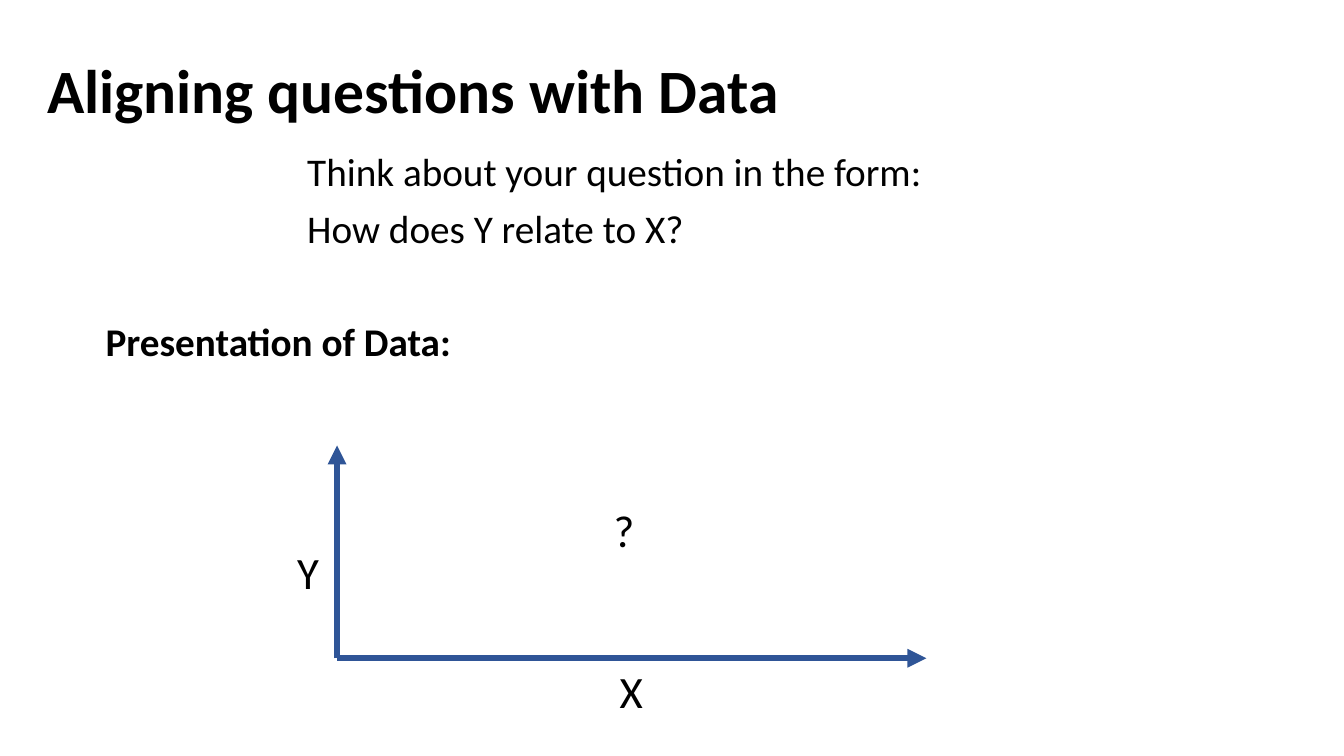
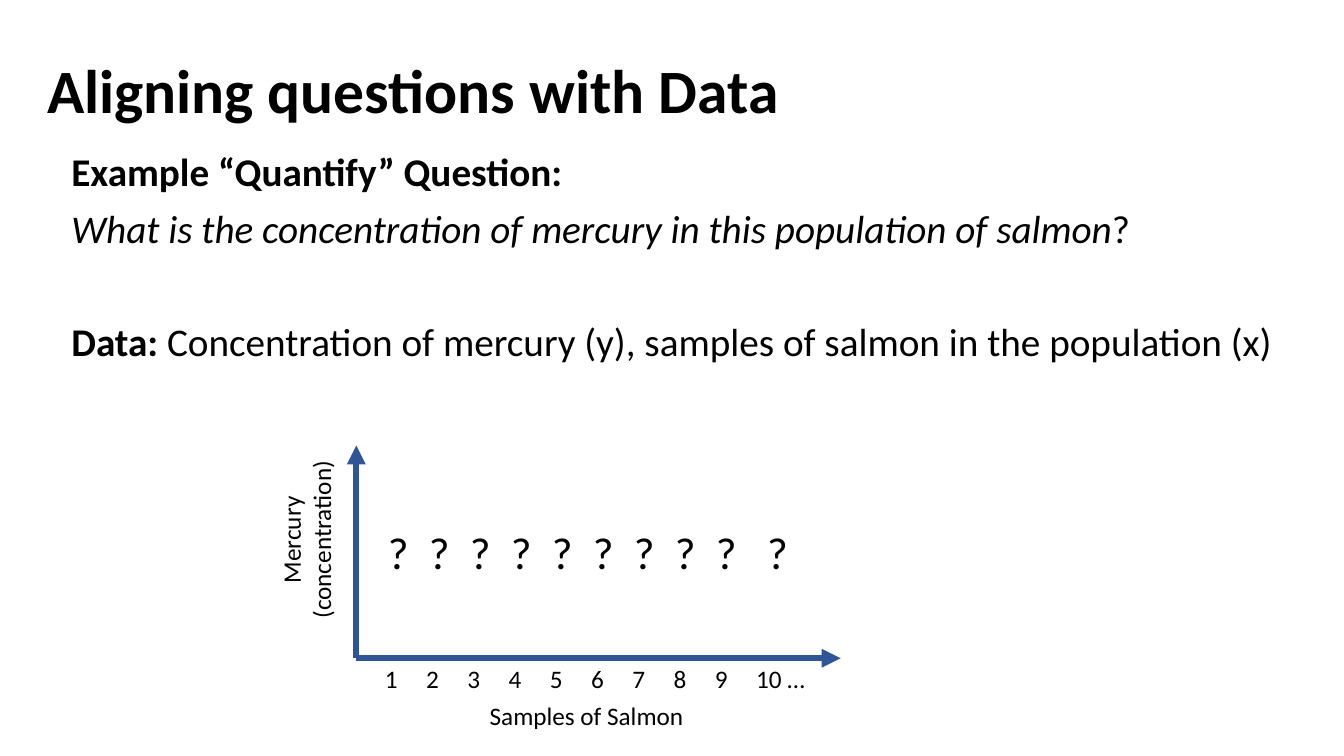
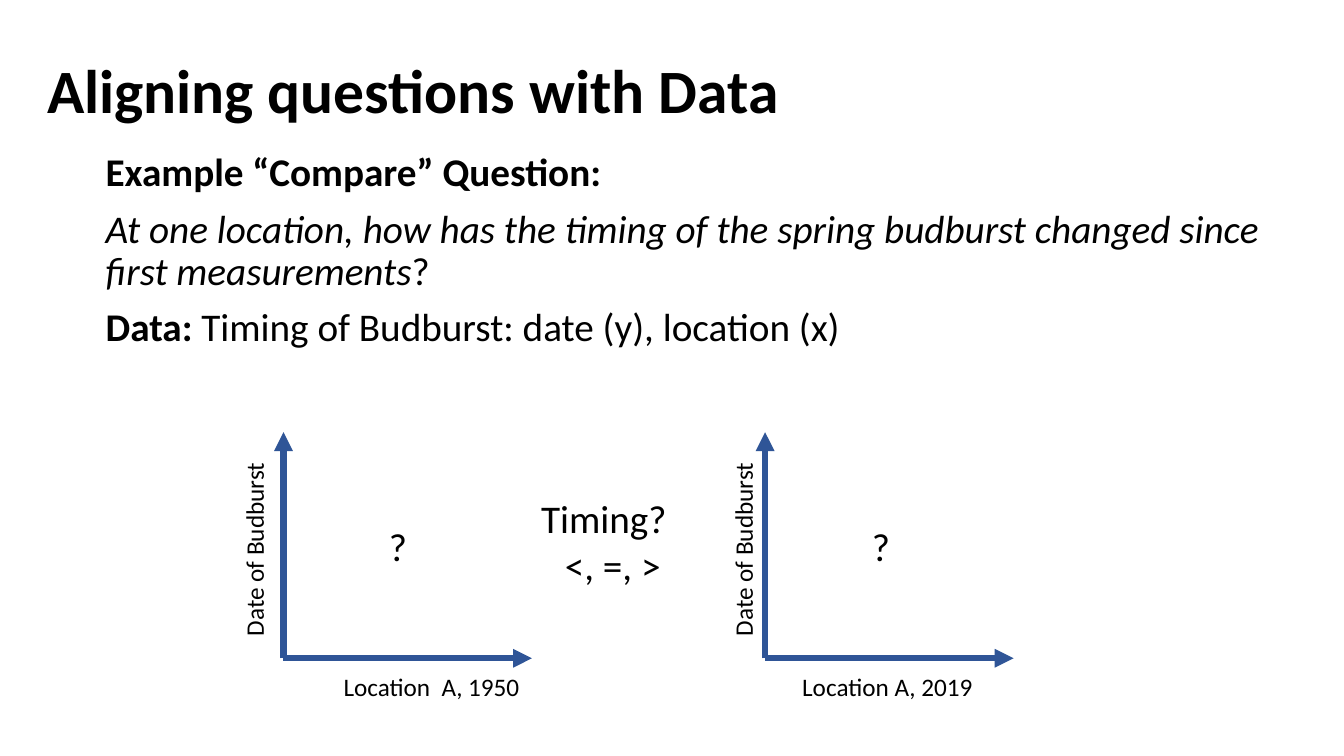
"""Build three slides on aligning questions with data."""
from dataclasses import dataclass
from typing import Optional

import lxml.etree
import pptx
import pptx.dml.color
import pptx.enum.shapes
import pptx.enum.text
import pptx.oxml.ns
import pptx.presentation
import pptx.shapes.autoshape
import pptx.slide
import pptx.text.text
import pptx.util

Pt = pptx.util.Pt
qn = pptx.oxml.ns.qn
ALIGN = pptx.enum.text.PP_ALIGN
ANCHOR = pptx.enum.text.MSO_ANCHOR

COLOURS = {"text": "000000", "axis": "2F5597"}
FONT = "Calibri"
TITLE = "Aligning questions with Data"
TITLE_BOX = (26.6, 14.4, 828, 104.4)
BODY_BOX = (68.4, 105.8, 852.5, 405.4)
WIDE_BODY_BOX = (43.9, 105.8, 876.2, 405.4)
TITLE_FORMAT = {"size": Pt(44), "bold": True}
BODY_SIZE = 28
LINE_SPACING = 0.9
BEFORE = 10
BEFORE_DATA = 50.8
AXIS_Y = 470.2
AXIS_WIDTH = 4.5

Box = tuple[float, float, float, float]


@dataclass(frozen=True)
class Run:
    text: str
    bold: bool = False
    italic: bool = False


@dataclass(frozen=True)
class Line:
    runs: tuple[Run, ...]
    before: float = BEFORE
    indent: float = 0


@dataclass(frozen=True)
class Axes:
    left: float
    top: float
    right: float


@dataclass(frozen=True)
class Label:
    lines: tuple[str, ...]
    box: Box
    size: float
    centred: bool = False
    rotation: float = 0
    tabs: tuple[float, ...] = ()


@dataclass(frozen=True)
class Page:
    body_box: Box
    body: tuple[Line, ...]
    axes: tuple[Axes, ...]
    labels: tuple[Label, ...]


def colour(name: str) -> pptx.dml.color.RGBColor:
    return pptx.dml.color.RGBColor.from_string(COLOURS[name])


def add_run(paragraph: pptx.text.text._Paragraph, text: str, formats: dict) -> None:
    run = paragraph.add_run()
    run.text = text
    for attribute, value in {"name": FONT, **formats}.items():
        setattr(run.font, attribute, value)
    run.font.color.rgb = colour("text")


def add_box(slide: pptx.slide.Slide, box: Box, wrap: bool = True) -> pptx.shapes.autoshape.Shape:
    text_box = slide.shapes.add_textbox(*map(Pt, box))
    text_box.text_frame.word_wrap = wrap
    return text_box


def next_paragraph(frame: pptx.text.text.TextFrame, index: int) -> pptx.text.text._Paragraph:
    return frame.add_paragraph() if index else frame.paragraphs[0]


def draw_title(slide: pptx.slide.Slide) -> None:
    frame = add_box(slide, TITLE_BOX).text_frame
    frame.vertical_anchor = ANCHOR.MIDDLE
    heading = frame.paragraphs[0]
    heading.line_spacing = LINE_SPACING
    add_run(heading, TITLE, TITLE_FORMAT)


def draw_body(slide: pptx.slide.Slide, box: Box, lines: tuple[Line, ...]) -> None:
    frame = add_box(slide, box).text_frame
    for index, line in enumerate(lines):
        paragraph = next_paragraph(frame, index)
        paragraph.line_spacing = LINE_SPACING
        paragraph.space_before = Pt(line.before)
        paragraph._p.get_or_add_pPr().set("marL", str(Pt(line.indent)))
        for run in line.runs:
            add_run(paragraph, run.text,
                    {"size": Pt(BODY_SIZE), "bold": run.bold, "italic": run.italic})


def draw_arrow(slide: pptx.slide.Slide, x: float, y: float, end_x: float, end_y: float) -> None:
    arrow = slide.shapes.add_connector(
        pptx.enum.shapes.MSO_CONNECTOR.STRAIGHT, Pt(x), Pt(y), Pt(end_x), Pt(end_y))
    arrow.line.color.rgb = colour("axis")
    arrow.line.width = Pt(AXIS_WIDTH)
    lxml.etree.SubElement(arrow.line._get_or_add_ln(), qn("a:tailEnd"), type="triangle")
    lxml.etree.SubElement(arrow._element.spPr, qn("a:effectLst"))


def draw_axes(slide: pptx.slide.Slide, axes: Axes) -> None:
    for end_x, end_y in ((axes.left, axes.top), (axes.right, AXIS_Y)):
        draw_arrow(slide, axes.left, AXIS_Y, end_x, end_y)


def draw_label(slide: pptx.slide.Slide, label: Label) -> None:
    text_box = add_box(slide, label.box, wrap=bool(label.tabs))
    text_box.rotation = label.rotation
    for index, text in enumerate(label.lines):
        paragraph = next_paragraph(text_box.text_frame, index)
        paragraph.alignment = ALIGN.CENTER if label.centred else ALIGN.LEFT
        if label.tabs:
            stops = lxml.etree.SubElement(paragraph._p.get_or_add_pPr(), qn("a:tabLst"))
            for position in label.tabs:
                lxml.etree.SubElement(stops, qn("a:tab"), pos=str(Pt(position)), algn="l")
        add_run(paragraph, text, {"size": Pt(label.size)})


def tab_stops(pitch: float, last_extra: float = 0) -> tuple[float, ...]:
    return (*(pitch * step for step in range(1, 9)), pitch * 9 + last_extra)


def draw_page(presentation: pptx.presentation.Presentation, page: Page) -> None:
    slide = presentation.slides.add_slide(presentation.slide_layouts[6])
    draw_title(slide)
    draw_body(slide, page.body_box, page.body)
    for axes in page.axes:
        draw_axes(slide, axes)
    for label in page.labels:
        draw_label(slide, label)


def question(kind: str, text: str) -> tuple[Line, Line]:
    return (Line((Run(f"Example “{kind}” Question:", bold=True),)),
            Line((Run(text, italic=True), Run("?"))))


def data(text: str, before: float = BEFORE) -> Line:
    return Line((Run("Data: ", bold=True), Run(text)), before)


def date_label(left: float) -> Label:
    return Label(("Date of Budburst",), (left, 378, 139.7, 28.8), 18, True, 270)


def unknown(left: float) -> Label:
    return Label(("?",), (left, 369.4, 27.4, 41), 28)


PAGES = (
    Page(
        BODY_BOX,
        (Line((Run("Think about your question in the form:"),), indent=144),
         Line((Run("How does Y relate to X?"),), indent=144),
         Line((Run("Presentation of Data:", bold=True),), BEFORE_DATA)),
        (Axes(240.8, 318.2, 661.7),),
        (Label(("Y",), (205.2, 385.9, 30.2, 46.1), 32),
         Label(("X",), (435.6, 470.2, 31.7, 46.1), 32),
         Label(("?",), (431.3, 355.7, 29.5, 46.1), 32)),
    ),
    Page(
        WIDE_BODY_BOX,
        (*question("Quantify",
                   "What is the concentration of mercury in this population of salmon"),
         data("Concentration of mercury (y), samples of salmon in the population (x)",
              BEFORE_DATA)),
        (Axes(254.5, 318.2, 600.5),),
        (Label(("Mercury", "(concentration)"), (141.8, 360, 154.1, 51.1), 18, True, 270),
         Label(("Samples of Salmon",), (342.7, 496.8, 158.4, 28.8), 18),
         Label(("\t".join("?" * 10),), (270, 371.5, 303.8, 46.1), 32,
               tabs=tab_stops(29.29, 7.2)),
         Label(("\t".join(map(str, range(1, 11))) + " …",), (267.8, 470.2, 321.1, 28.8), 18,
               tabs=tab_stops(29.47))),
    ),
    Page(
        BODY_BOX,
        (*question("Compare", "At one location, how has the timing of the spring budburst "
                              "changed since first measurements"),
         data("Timing of Budburst: date (y), location (x)")),
        (Axes(202.5, 308.7, 380), Axes(546.5, 308.7, 724)),
        (Label(("Timing? ", " <, =, >"), (378.7, 349.2, 111.6, 74.9), 28, True),
         Label(("Location  A, 1950",), (238.3, 475.9, 141.8, 28.8), 18),
         Label(("Location A, 2019",), (565.9, 475.9, 137.5, 28.8), 18),
         date_label(111.6), date_label(460.8), unknown(270.7), unknown(615.6)),
    ),
)


def main() -> None:
    presentation = pptx.Presentation()
    presentation.slide_width = Pt(960)
    presentation.slide_height = Pt(540)
    for page in PAGES:
        draw_page(presentation, page)
    presentation.save("out.pptx")


if __name__ == "__main__":
    main()
